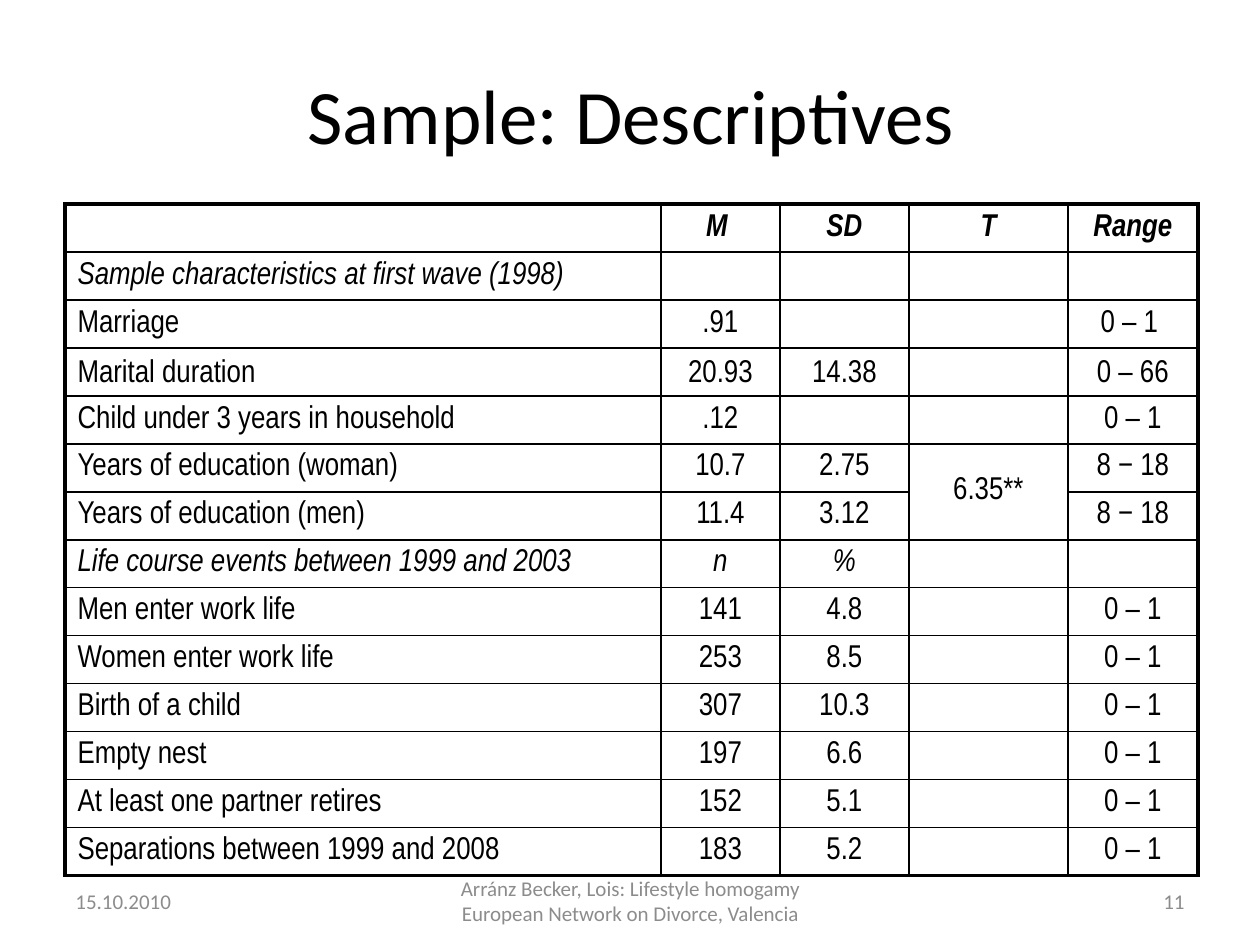
from typing import NamedTuple

from lxml.etree import SubElement
from pptx import Presentation
from pptx.dml.color import RGBColor
from pptx.enum.text import MSO_ANCHOR, PP_ALIGN
from pptx.oxml.ns import qn
from pptx.util import Pt

PX = 914400 // 126
COLORS = {"text": "000000", "footer": "8C8C8C", "paper": "FFFFFF", "rule": "000000"}
INNER_RULE, OUTER_RULE = Pt(1), Pt(2.25)
COLUMN_WIDTHS = [596, 119, 129, 159, 130]
ROW_HEIGHT = 48
TABLE_LEFT, TABLE_TOP = 65, 204


class Row(NamedTuple):
    label: str
    mean: str = ""
    deviation: str = ""
    t_value: str = ""
    value_range: str = ""
    bold: bool = False
    italic: bool = False
    line_spacing: object = None


class Footer(NamedTuple):
    text: str
    left: int
    width: int
    align: PP_ALIGN


EXACT = Pt(17)
ROWS = [
    Row("", "M ", "SD", "T", "Range", bold=True, italic=True),
    Row("Sample characteristics at first wave (1998)", italic=True, line_spacing=EXACT),
    Row("Marriage", ".91", "", "", "0 – 1 ", line_spacing=EXACT),
    Row("Marital duration", "20.93", "14.38", "", "0 – 66", line_spacing=1.15),
    Row("Child under 3 years in household ", ".12", "", "", "0 – 1", line_spacing=EXACT),
    Row("Years of education (woman)", "10.7", "2.75", "6.35**", "8 − 18", line_spacing=EXACT),
    Row("Years of education (men)", "11.4", "3.12", "", "8 − 18", line_spacing=EXACT),
    Row("Life course events between 1999 and 2003", "n", "%", italic=True),
    Row("Men enter work life", "141", "4.8", "", "0 – 1"),
    Row("Women enter work life", "253", "8.5", "", "0 – 1"),
    Row("Birth of a child", "307", "10.3", "", "0 – 1"),
    Row("Empty nest", "197", "6.6", "", "0 – 1"),
    Row("At least one partner retires", "152", "5.1", "", "0 – 1"),
    Row("Separations between 1999 and 2008", "183", "5.2", "", "0 – 1"),
]
WOMEN_ROW, MEN_ROW, T_COLUMN = 5, 6, 3

FOOTERS = [
    Footer("15.10.2010", 63, 294, PP_ALIGN.LEFT),
    Footer("11", 903, 294, PP_ALIGN.RIGHT),
    Footer("Arránz Becker, Lois: Lifestyle homogamy European Network on Divorce, Valencia",
           431, 399, PP_ALIGN.CENTER),
]


def style_font(font, name: str, size: float, color: str) -> None:
    font.name = name
    font.size = Pt(size)
    font.color.rgb = RGBColor.from_string(COLORS[color])


def place(shape, left: int, top: int, width: int, height: int) -> None:
    shape.left, shape.top = left * PX, top * PX
    shape.width, shape.height = width * PX, height * PX


def set_borders(cell, widths: dict[str, int]) -> None:
    """Add solid rules; the schema wants them ahead of the cell's fill."""
    properties = cell._tc.get_or_add_tcPr()
    for position, (side, width) in enumerate(widths.items()):
        line = SubElement(properties, qn(f"a:ln{side}"), w=str(int(width)))
        fill = SubElement(line, qn("a:solidFill"))
        SubElement(fill, qn("a:srgbClr"), val=COLORS["rule"])
        properties.insert(position, line)


def fill_cell(cell, text: str, row: Row, align: PP_ALIGN) -> None:
    cell.fill.solid()
    cell.fill.fore_color.rgb = RGBColor.from_string(COLORS["paper"])
    cell.vertical_anchor = MSO_ANCHOR.MIDDLE
    cell.margin_top = cell.margin_bottom = 3 * PX
    para = cell.text_frame.paragraphs[0]
    para.text = text
    para.alignment = align
    if row.line_spacing:
        para.line_spacing = row.line_spacing
    style_font(para.font, "Arial Narrow", 18, "text")
    para.font.bold = row.bold
    para.font.italic = row.italic


def add_descriptives(page) -> None:
    frame = page.shapes.add_table(
        len(ROWS), len(COLUMN_WIDTHS), TABLE_LEFT * PX, TABLE_TOP * PX,
        sum(COLUMN_WIDTHS) * PX, ROW_HEIGHT * len(ROWS) * PX)
    table = frame.table
    table.first_row = table.horz_banding = False
    for column, width in zip(table.columns, COLUMN_WIDTHS):
        column.width = width * PX
    last_row, last_column = len(ROWS) - 1, len(COLUMN_WIDTHS) - 1
    for r, row in enumerate(ROWS):
        table.rows[r].height = ROW_HEIGHT * PX
        for c, text in enumerate(row[:len(COLUMN_WIDTHS)]):
            cell = table.cell(r, c)
            fill_cell(cell, text, row, PP_ALIGN.CENTER if c else PP_ALIGN.LEFT)
            on_edge = {"L": c == 0, "R": c == last_column, "T": r == 0, "B": r == last_row}
            set_borders(cell, {side: OUTER_RULE if edge else INNER_RULE
                               for side, edge in on_edge.items()})
    table.cell(WOMEN_ROW, T_COLUMN).merge(table.cell(MEN_ROW, T_COLUMN))


def add_footer(page, footer: Footer) -> None:
    box = page.shapes.add_textbox(0, 0, 0, 0)
    place(box, footer.left, 876, footer.width, 50)
    box.text_frame.word_wrap = True
    box.text_frame.vertical_anchor = MSO_ANCHOR.MIDDLE
    para = box.text_frame.paragraphs[0]
    para.text = footer.text
    para.alignment = footer.align
    style_font(para.font, "Calibri", 12, "footer")


def main() -> None:
    deck = Presentation()
    deck.slide_width, deck.slide_height = 1260 * PX, 945 * PX
    page = deck.slides.add_slide(deck.slide_layouts[5])
    title = page.shapes.title
    place(title, 64, 35, 1134, 158)
    title.text_frame.vertical_anchor = MSO_ANCHOR.MIDDLE
    para = title.text_frame.paragraphs[0]
    para.text = "Sample: Descriptives"
    para.alignment = PP_ALIGN.CENTER
    style_font(para.font, "Calibri", 44, "text")
    add_descriptives(page)
    for footer in FOOTERS:
        add_footer(page, footer)
    deck.save("out.pptx")


if __name__ == "__main__":
    main()
